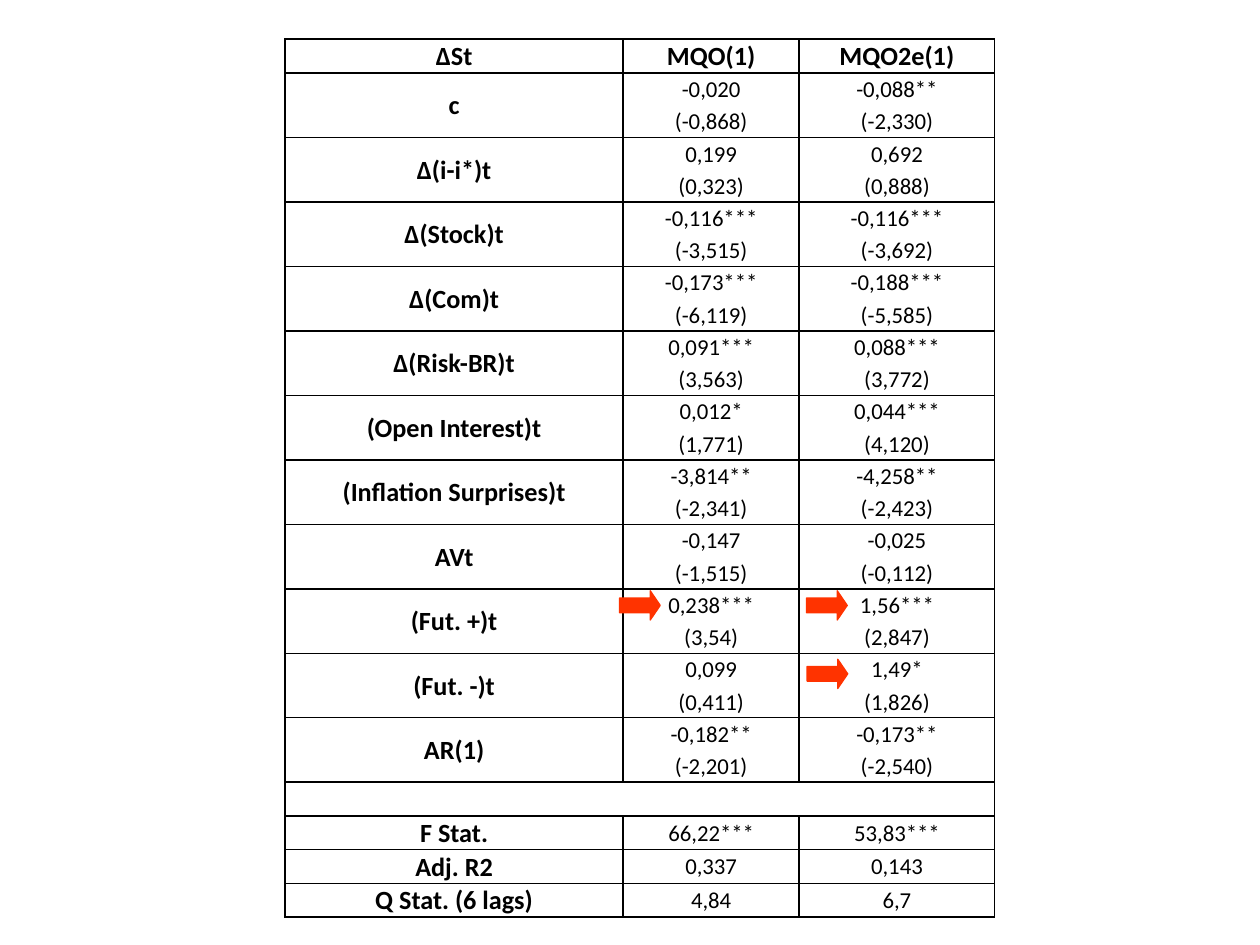
import pptx
import pptx.util
import pptx.dml.color
import pptx.enum.shapes
import pptx.enum.text
from lxml import etree
from pptx.util import Cm

BLACK = pptx.dml.color.RGBColor(0x00, 0x00, 0x00)
ORANGE = pptx.dml.color.RGBColor(0xFF, 0x33, 0x00)
FONT = "Calibri"
LABEL_SIZE, VALUE_SIZE = 15, 13
DRAWING_NS = "{http://schemas.openxmlformats.org/drawingml/2006/main}"

COLUMN_WIDTHS = (6.81, 3.55, 3.94)
SINGLE_HEIGHT, PAIR_HEIGHT = 0.67, 0.65

HEADINGS = ("∆St", "MQO(1)", "MQO2e(1)")
COEFFICIENTS = (
    ("c", ("-0,020", "-0,088**"), ("(-0,868)", "(-2,330)")),
    ("∆(i-i*)t", ("0,199", "0,692"), ("(0,323)", "(0,888)")),
    ("∆(Stock)t", ("-0,116***", "-0,116***"), ("(-3,515)", "(-3,692)")),
    ("∆(Com)t", ("-0,173***", "-0,188***"), ("(-6,119)", "(-5,585)")),
    ("∆(Risk-BR)t", ("0,091***", "0,088***"), ("(3,563)", "(3,772)")),
    ("(Open Interest)t", ("0,012*", "0,044***"), ("(1,771)", "(4,120)")),
    ("(Inflation Surprises)t", ("-3,814**", "-4,258**"), ("(-2,341)", "(-2,423)")),
    ("AVt", ("-0,147", "-0,025"), ("(-1,515)", "(-0,112)")),
    ("(Fut. +)t", ("0,238***", "1,56***"), ("(3,54)", "(2,847)")),
    ("(Fut. -)t", ("0,099", "1,49*"), ("(0,411)", "(1,826)")),
    ("AR(1)", ("-0,182**", "-0,173**"), ("(-2,201)", "(-2,540)")),
)
STATISTICS = (
    ("F Stat.", "66,22***", "53,83***"),
    ("Adj. R2", "0,337", "0,143"),
    ("Q Stat. (6 lags)", "4,84", "6,7"),
)
HIGHLIGHTS = ((12.49, 11.91), (16.26, 11.91), (16.27, 13.29))


def write_text(cell, text, size=VALUE_SIZE, bold=False, color=BLACK):
    """Write centred text in a cell, keeping the size of an empty one."""
    cell.margin_left = cell.margin_right = cell.margin_top = Cm(0.03)
    cell.margin_bottom = 0
    cell.vertical_anchor = pptx.enum.text.MSO_ANCHOR.MIDDLE
    paragraph = cell.text_frame.paragraphs[0]
    paragraph.alignment = pptx.enum.text.PP_ALIGN.CENTER
    if not text:
        etree.SubElement(paragraph._p, DRAWING_NS + "endParaRPr", sz=str(size * 100))
        return
    run = paragraph.add_run()
    run.text = text
    run.font.name = FONT
    run.font.size = pptx.util.Pt(size)
    run.font.bold = bold
    run.font.color.rgb = color


def rule_cell(cell, sides="LRTB"):
    """Clear the cell's fill and draw black borders on the given sides only."""
    cell.fill.background()
    properties = cell._tc.get_or_add_tcPr()
    for position, side in enumerate("LRTB"):
        border = etree.Element(DRAWING_NS + "ln" + side, w="12700")
        if side in sides:
            fill = etree.SubElement(border, DRAWING_NS + "solidFill")
            etree.SubElement(fill, DRAWING_NS + "srgbClr", val=str(BLACK))
        else:
            etree.SubElement(border, DRAWING_NS + "noFill")
        properties.insert(position, border)


def fill_row(table, row, texts, sides=("LRTB",) * 3, height=SINGLE_HEIGHT, value_format=None):
    """Fill one row with a bold label and its values."""
    table.rows[row].height = Cm(height)
    label_format = {"size": LABEL_SIZE, "bold": True}
    for column, text in enumerate(texts):
        cell = table.cell(row, column)
        cell_format = label_format if column == 0 else value_format or {}
        write_text(cell, text, **cell_format)
        rule_cell(cell, sides[column])


def add_regression_table(slide):
    """Add the table of coefficients and test statistics."""
    row_count = 2 + 2 * len(COEFFICIENTS) + len(STATISTICS)
    height = 2 * len(COEFFICIENTS) * PAIR_HEIGHT + (2 + len(STATISTICS)) * SINGLE_HEIGHT
    table = slide.shapes.add_table(
        row_count, len(HEADINGS), Cm(5.75), Cm(0.79), Cm(sum(COLUMN_WIDTHS)), Cm(height)
    ).table
    table.first_row = table.horz_banding = False
    for column, width in zip(table.columns, COLUMN_WIDTHS):
        column.width = Cm(width)

    fill_row(table, 0, HEADINGS, value_format={"size": LABEL_SIZE, "bold": True})
    for index, (label, estimates, t_values) in enumerate(COEFFICIENTS):
        row = 1 + 2 * index
        fill_row(table, row, (label, *estimates), ("LRTB", "LRT", "LRT"), PAIR_HEIGHT)
        fill_row(table, row + 1, ("", *t_values), ("LRB",) * 3, PAIR_HEIGHT)
        table.cell(row, 0).merge(table.cell(row + 1, 0))

    gap_row = 1 + 2 * len(COEFFICIENTS)
    fill_row(table, gap_row, ("", "", ""), ("LTB", "TB", "RTB"))
    for row, statistic in enumerate(STATISTICS, start=gap_row + 1):
        fill_row(table, row, statistic)


def add_highlight_arrow(slide, left, top):
    """Add an arrow pointing at a significant estimate."""
    arrow = slide.shapes.add_shape(
        pptx.enum.shapes.MSO_SHAPE.RIGHT_ARROW, Cm(left), Cm(top), Cm(0.82), Cm(0.59)
    )
    arrow.adjustments[1] = 0.34
    arrow.shadow.inherit = False
    arrow.fill.solid()
    arrow.fill.fore_color.rgb = ORANGE
    arrow.line.color.rgb = ORANGE
    arrow.line.width = pptx.util.Pt(0.75)


def main():
    """Build the regression results slide and save it."""
    presentation = pptx.Presentation()
    presentation.slide_width = Cm(25.4)
    presentation.slide_height = Cm(19.05)
    slide = presentation.slides.add_slide(presentation.slide_layouts[6])
    add_regression_table(slide)
    for left, top in HIGHLIGHTS:
        add_highlight_arrow(slide, left, top)
    presentation.save("out.pptx")


if __name__ == "__main__":
    main()
